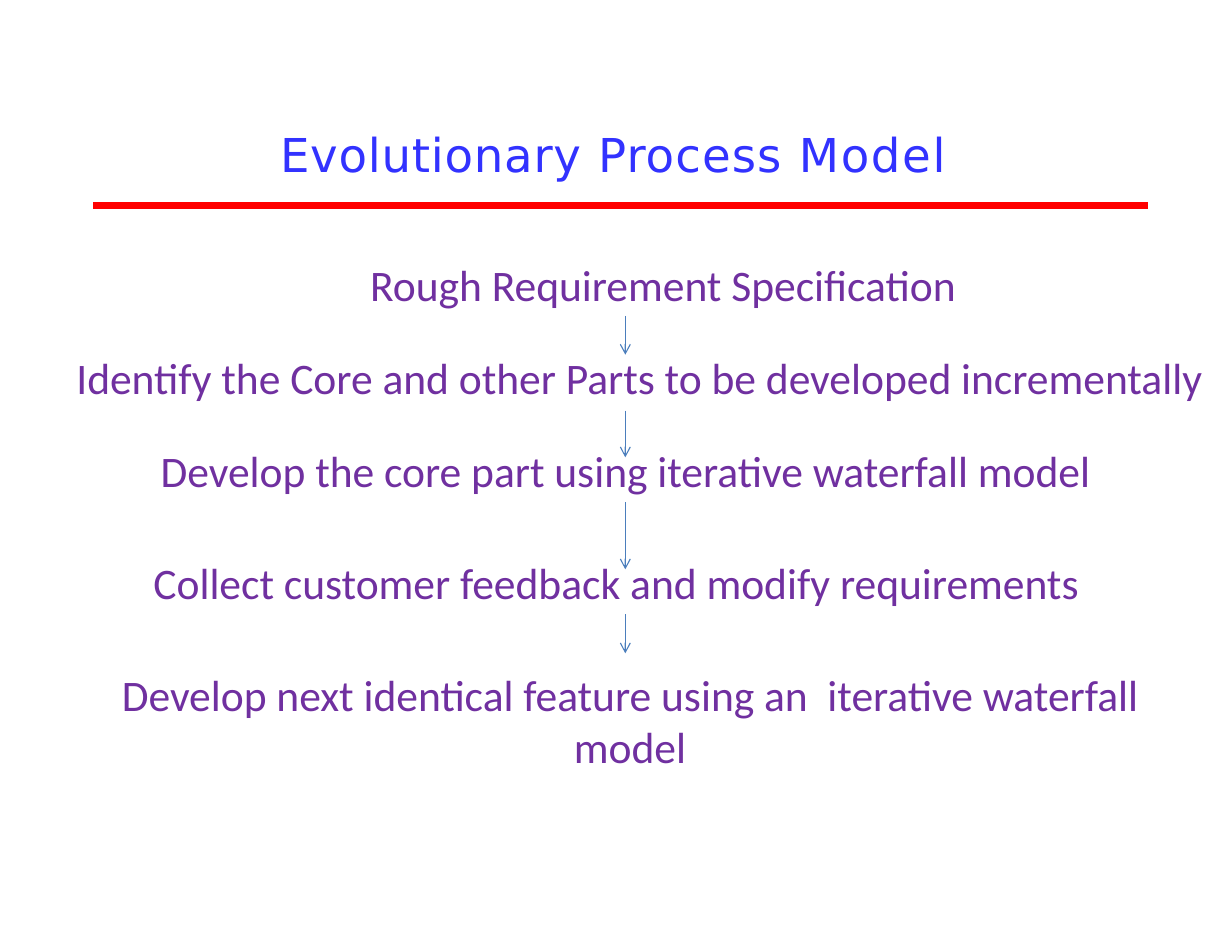
from lxml.etree import SubElement
from pptx import Presentation
from pptx.dml.color import RGBColor
from pptx.enum.shapes import MSO_CONNECTOR
from pptx.enum.text import PP_ALIGN
from pptx.oxml.ns import qn
from pptx.util import Pt


def color(value):
    return RGBColor.from_string(value)


def add_line(slide, start, end, line_color, width):
    line = slide.shapes.add_connector(MSO_CONNECTOR.STRAIGHT, *map(Pt, start + end))
    line.line.color.rgb = color(line_color)
    line.line.width = Pt(width)
    SubElement(line._element.spPr, qn("a:effectLst"))
    return line


presentation = Presentation()
presentation.slide_width = Pt(792)
presentation.slide_height = Pt(612)
slide = presentation.slides.add_slide(presentation.slide_layouts[6])

title = slide.shapes.add_textbox(Pt(180), Pt(80), Pt(480), Pt(37.5))
frame = title.text_frame
frame.word_wrap = True
frame.margin_left = frame.margin_right = frame.margin_bottom = 0
frame.margin_top = Pt(1)
paragraph = frame.paragraphs[0]
paragraph.space_before = Pt(1)
paragraph.font.name = "DejaVu Sans"
paragraph.font.size = Pt(30)
paragraph.font.color.rgb = color("3232FF")
for word, spacing in [("Evolutionary ", 50), ("Process ", 70), ("Model", 110)]:
    run = paragraph.add_run()
    run.text = word
    run._r.get_or_add_rPr().set("spc", str(spacing))

add_line(slide, (60, 132), (738, 132), "FF0000", 4.5)

steps = [
    ("Rough Requirement Specification", 72, 162, 660, 41, PP_ALIGN.LEFT, 166),
    ("Identify the Core and other Parts to be developed incrementally",
     42, 222, 750, 41, PP_ALIGN.LEFT, 7.2),
    ("Develop the core part using iterative waterfall model",
     30, 282, 744, 41, PP_ALIGN.CENTER, 7.2),
    ("Collect customer feedback and modify requirements",
     60, 354, 672, 41, PP_ALIGN.CENTER, 7.2),
    ("Develop next identical feature using an  iterative waterfall model",
     36, 426, 738, 75, PP_ALIGN.CENTER, 7.2),
]
for text, left, top, width, height, alignment, margin in steps:
    step = slide.shapes.add_textbox(Pt(left), Pt(top), Pt(width), Pt(height))
    frame = step.text_frame
    frame.word_wrap = True
    frame.margin_left = Pt(margin)
    paragraph = frame.paragraphs[0]
    paragraph.text = text
    paragraph.alignment = alignment
    paragraph.font.name = "Calibri"
    paragraph.font.size = Pt(28)
    paragraph.font.color.rgb = color("7030A0")

for top, bottom in [(203, 228), (264, 294), (323, 366), (395, 420)]:
    arrow = add_line(slide, (402, top), (402, bottom), "4B7EBC", 0.75)
    SubElement(arrow.line._get_or_add_ln(), qn("a:tailEnd"), type="arrow")

presentation.save("out.pptx")
